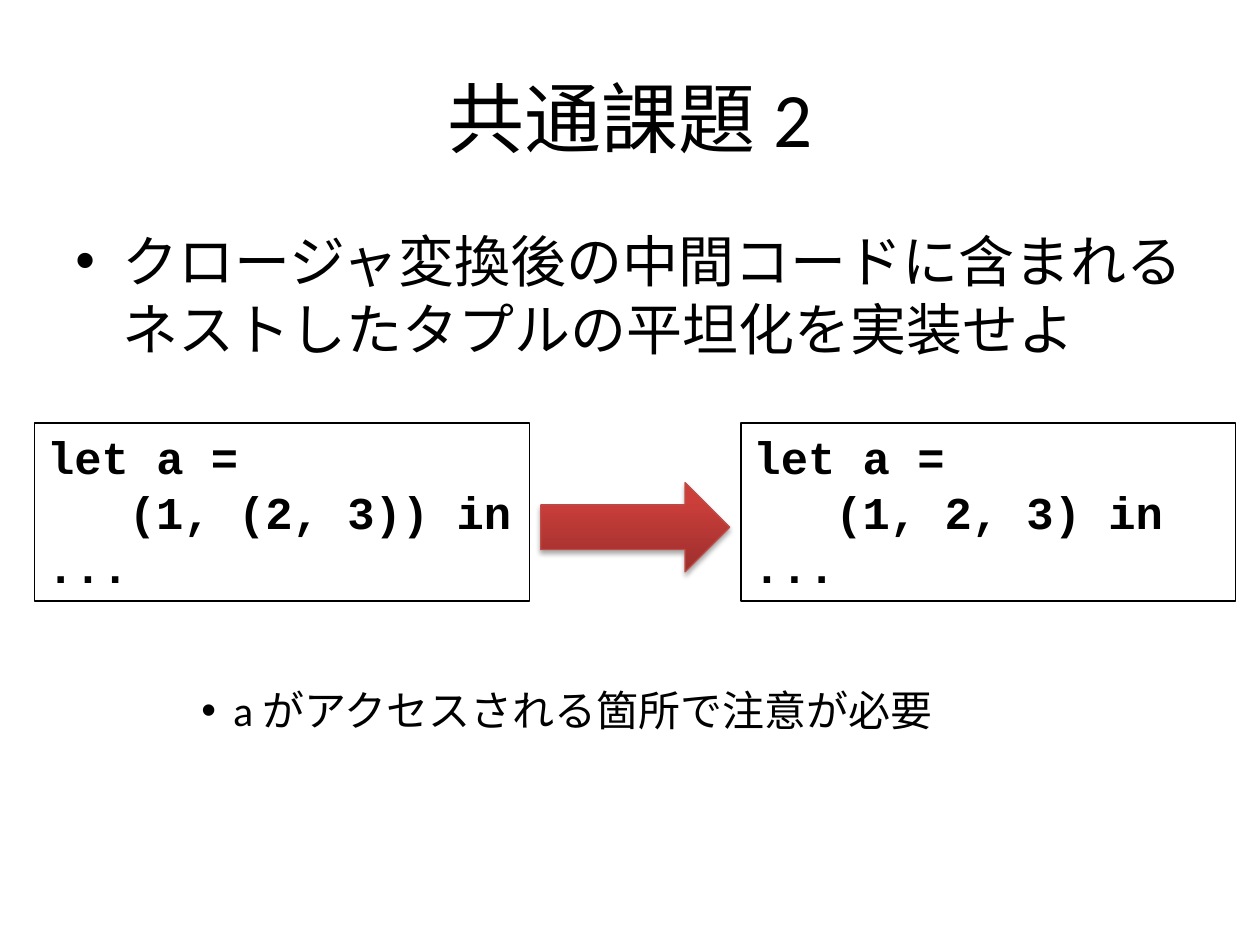
"""Build the slide on flattening nested tuples."""
import pptx
import pptx.util
import pptx.dml.color
import pptx.enum.shapes
import pptx.enum.text
import pptx.oxml
import pptx.oxml.ns

Cm, Pt = pptx.util.Cm, pptx.util.Pt
RGB = pptx.dml.color.RGBColor
SHAPE = pptx.enum.shapes.MSO_SHAPE
ALIGN = pptx.enum.text.PP_ALIGN
ANCHOR = pptx.enum.text.MSO_ANCHOR
BLACK = RGB(0x00, 0x00, 0x00)
DARK = RGB(0x9C, 0x2F, 0x2D)
RED = RGB(0xCB, 0x3E, 0x3A)
EDGE = RGB(0xBF, 0x4C, 0x48)
NS = pptx.oxml.ns.nsdecls("a")


def write(para, text, size, font="Calibri", bold=False):
    run = para.add_run()
    run.text = text
    run.font.size = Pt(size)
    run.font.name = font
    run.font.bold = bold
    run.font.color.rgb = BLACK


def indent(para, left, hang=0):
    props = para._p.get_or_add_pPr()
    props.set("marL", str(Cm(left)))
    props.set("indent", str(-Cm(hang)))
    if hang:
        for xml in (f'<a:buFont {NS} typeface="Arial"/>', f'<a:buChar {NS} char="•"/>'):
            props.append(pptx.oxml.parse_xml(xml))


deck = pptx.Presentation()
deck.slide_width, deck.slide_height = Cm(25.4), Cm(19.05)
slide = deck.slides.add_slide(deck.slide_layouts[6])
shapes = slide.shapes

title = shapes.add_textbox(Cm(1.27), Cm(0.76), Cm(22.86), Cm(3.18)).text_frame
title.word_wrap = True
title.vertical_anchor = ANCHOR.MIDDLE
title.paragraphs[0].alignment = ALIGN.CENTER
write(title.paragraphs[0], "共通課題 2", 44)

points = [
    (4.45, 3.2, 32, 0.95, 0.95, ["クロージャ変換後の中間コードに含まれる", "ネストしたタプルの平坦化を実装せよ"]),
    (13.68, 1.3, 24, 3.18, 0.64, ["a がアクセスされる箇所で注意が必要"]),
]
for top, height, size, left, hang, lines in points:
    frame = shapes.add_textbox(Cm(1.27), Cm(top), Cm(24.13), Cm(height)).text_frame
    frame.word_wrap = True
    para = frame.paragraphs[0]
    indent(para, left, hang)
    for i, line in enumerate(lines):
        if i:
            para.add_line_break()
        write(para, line, size)

for left, tuple_line in ((0.7, "(1, (2, 3)) in"), (14.94, "(1, 2, 3) in")):
    box = shapes.add_shape(SHAPE.RECTANGLE, Cm(left), Cm(8.53), Cm(9.97), Cm(3.59))
    box.shadow.inherit = False
    box.fill.background()
    box.line.color.rgb = BLACK
    box.line.width = Pt(0.75)
    frame = box.text_frame
    frame.word_wrap = False
    frame.vertical_anchor = ANCHOR.TOP
    for i, (line, inset) in enumerate((("let a =", 0), (tuple_line, 1.65), ("...", 0))):
        para = frame.add_paragraph() if i else frame.paragraphs[0]
        para.alignment = ALIGN.LEFT
        indent(para, inset)
        write(para, line, 26, "Courier New", True)

arrow = shapes.add_shape(SHAPE.RIGHT_ARROW, Cm(10.9), Cm(9.73), Cm(3.81), Cm(1.8))
arrow.fill.gradient()
arrow.fill.gradient_angle = 90
for stop, color, place in zip(arrow.fill.gradient_stops, (DARK, RED), (0, 0.8)):
    stop.color.rgb = color
    stop.position = place
arrow.line.color.rgb = EDGE
arrow.line.width = Pt(0.75)
arrow.shadow.inherit = False
effects = arrow._element.spPr.find(pptx.oxml.ns.qn("a:effectLst"))
effects.append(pptx.oxml.parse_xml(
    f'<a:outerShdw {NS} blurRad="{Pt(3.1)}" dist="{Pt(1.8)}" dir="5400000" rotWithShape="0">'
    '<a:srgbClr val="000000"><a:alpha val="35000"/></a:srgbClr></a:outerShdw>'))

deck.save("out.pptx")
